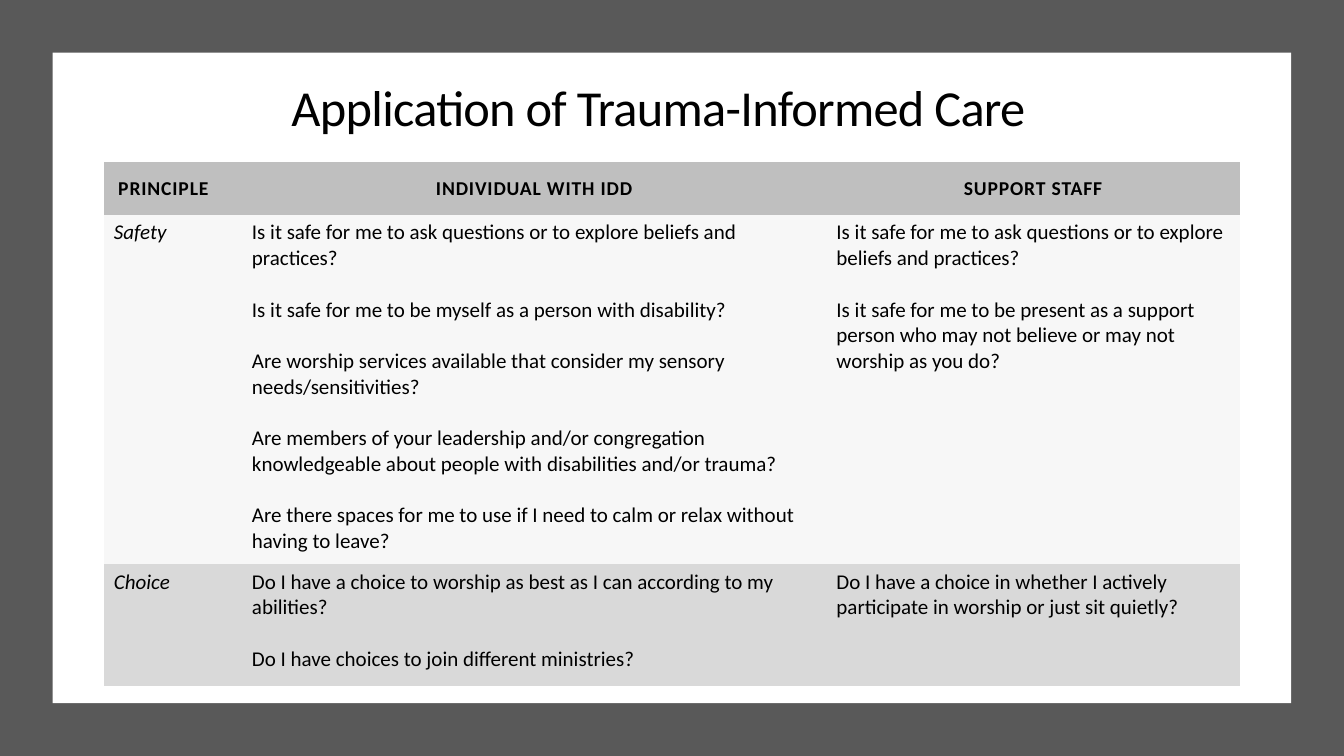
"""Build the slide on applying trauma-informed care."""
from pptx import Presentation
from pptx.dml.color import RGBColor
from pptx.enum.shapes import MSO_SHAPE as SHAPE
from pptx.enum.text import MSO_ANCHOR as ANCHOR, MSO_AUTO_SIZE as AUTO, PP_ALIGN as ALIGN
from pptx.util import Cm, Pt

BLACK = RGBColor(0x00, 0x00, 0x00)
WHITE = RGBColor(0xFF, 0xFF, 0xFF)
FRAME = RGBColor(0x59, 0x59, 0x59)
HEADER = RGBColor(0xBF, 0xBF, 0xBF)
BANDS = [RGBColor(0xF7, 0xF7, 0xF7), RGBColor(0xD9, 0xD9, 0xD9)]
NO_GRID = "{2D5ABB26-0587-4C30-8999-92F81FD0307C}"

HEADINGS = ["PRINCIPLE", "INDIVIDUAL WITH IDD", "SUPPORT STAFF"]
ROWS = [
    (["Safety"],
     ["Is it safe for me to ask questions or to explore beliefs and practices?",
      "Is it safe for me to be myself as a person with disability?",
      "Are worship services available that consider my sensory needs/sensitivities?",
      "Are members of your leadership and/or congregation knowledgeable about "
      "people with disabilities and/or trauma?",
      "Are there spaces for me to use if I need to calm or relax without having to leave?"],
     ["Is it safe for me to ask questions or to explore beliefs and practices?",
      "Is it safe for me to be present as a support person who may not believe "
      "or may not worship as you do?"]),
    (["Choice"],
     ["Do I have a choice to worship as best as I can according to my abilities?",
      "Do I have choices to join different ministries?"],
     ["Do I have a choice in whether I actively participate in worship or just sit quietly?"]),
]
COL_WIDTHS = [3.48, 14.73, 10.41]
ROW_HEIGHTS = [1.32, 8.79, 3.07]


class SlideBuilder:
    """Hold the text style and the current slide."""

    font = "Calibri"
    color = BLACK

    def __init__(self, prs):
        self.s = prs.slides.add_slide(prs.slide_layouts[5])

    def text(self, p, text, size, align=ALIGN.LEFT, bold=False, italic=False, spacing=0):
        r = p.add_run()
        r.text = text
        p.alignment = align
        f = p.font
        f.name, f.size, f.bold, f.italic = self.font, Pt(size), bold, italic
        f.color.rgb = self.color
        if spacing:
            r._r.get_or_add_rPr().set("spc", str(round(spacing * 100)))

    def panel(self, x, y, w, h, color):
        sp = self.s.shapes.add_shape(SHAPE.RECTANGLE, Cm(x), Cm(y), Cm(w), Cm(h))
        sp.shadow.inherit = False
        sp.fill.solid()
        sp.fill.fore_color.rgb = color
        sp.line.fill.background()

    def title(self, x, y, w, h, text):
        sp = self.s.shapes.title
        self.s.shapes.element.append(sp.element)
        sp.left, sp.top, sp.width, sp.height = Cm(x), Cm(y), Cm(w), Cm(h)
        tf = sp.text_frame
        tf.auto_size, tf.word_wrap = AUTO.NONE, True
        tf.vertical_anchor = ANCHOR.BOTTOM
        p = tf.paragraphs[0]
        p.line_spacing = 0.85
        self.text(p, text, 36, ALIGN.CENTER, spacing=-0.5)

    def cell(self, cell, texts, fill, size, margins, **style):
        cell.fill.solid()
        cell.fill.fore_color.rgb = fill
        (cell.margin_left, cell.margin_top,
         cell.margin_right, cell.margin_bottom) = [Cm(m) for m in margins]
        tf = cell.text_frame
        for i, text in enumerate(texts):
            p = tf.add_paragraph() if i else tf.paragraphs[0]
            p.space_before = Pt(18.3 if i else 0)
            self.text(p, text, size, **style)

    def table(self, x, y, headings, rows):
        tbl = self.s.shapes.add_table(
            len(ROW_HEIGHTS), len(COL_WIDTHS), Cm(x), Cm(y),
            Cm(sum(COL_WIDTHS)), Cm(sum(ROW_HEIGHTS))).table
        tbl._tbl.tblPr[0].text = NO_GRID
        for col, width in zip(tbl.columns, COL_WIDTHS):
            col.width = Cm(width)
        for row, height in zip(tbl.rows, ROW_HEIGHTS):
            row.height = Cm(height)
        for c, heading in enumerate(headings):
            self.cell(tbl.cell(0, c), [heading], HEADER, 14, [0.36] * 4, bold=True,
                      spacing=0.6, align=ALIGN.CENTER if c else ALIGN.LEFT)
        for i, (row, band) in enumerate(zip(rows, BANDS), 1):
            for c, texts in enumerate(row):
                self.cell(tbl.cell(i, c), texts, band, 15,
                          [0.25, 0.13, 0.25, 0.25], italic=c == 0)


def main():
    prs = Presentation()
    prs.slide_width, prs.slide_height = Cm(33.87), Cm(19.05)
    b = SlideBuilder(prs)
    b.panel(0, 0, 33.87, 19.05, FRAME)
    b.panel(1.33, 1.33, 31.21, 16.39, WHITE)
    b.title(2.62, 1.98, 27.94, 1.6, "Application of Trauma-Informed Care")
    b.table(2.62, 4.09, HEADINGS, ROWS)
    prs.save("out.pptx")


if __name__ == "__main__":
    main()
